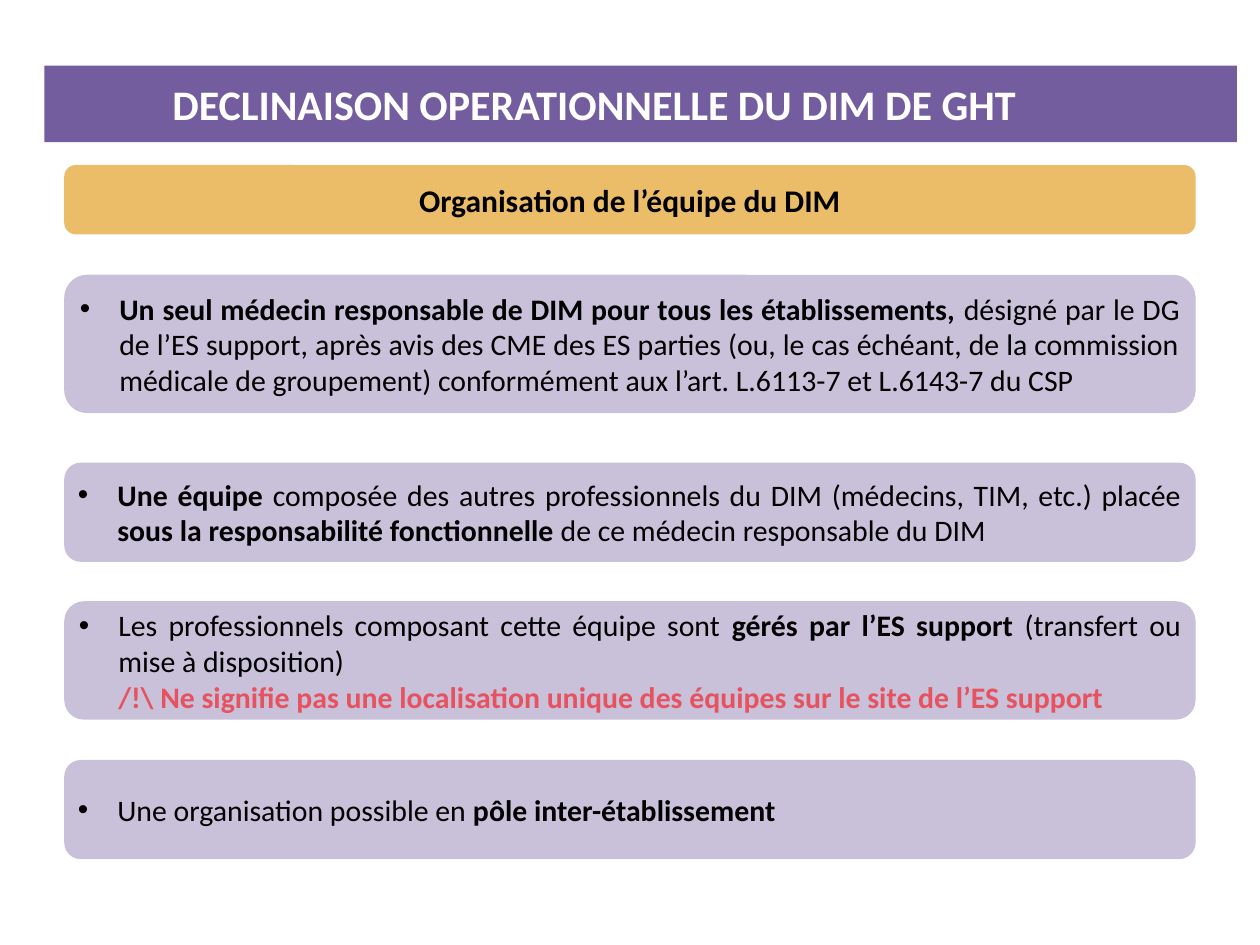
from lxml import etree
from pptx import Presentation
from pptx.dml.color import RGBColor
from pptx.enum import shapes, text
from pptx.oxml.ns import qn
from pptx.util import Pt

PURPLE = RGBColor(0x73, 0x5D, 0x9F)
GOLD = RGBColor(0xEC, 0xBD, 0x68)
LILAC = RGBColor(0xC9, 0xC0, 0xDA)
RED = RGBColor(0xE7, 0x52, 0x5F)
BLACK = RGBColor(0, 0, 0)
WHITE = RGBColor(255, 255, 255)

# Content: runs are (text, bold)
TITLE = "DECLINAISON OPERATIONNELLE DU DIM DE GHT"
HEAD = "Organisation de l’équipe du DIM"
WARN = "/!\\ Ne signifie pas une localisation unique des équipes sur le site de l’ES support"

# Cards: top, height, bullet runs, warning line
CARDS = [
    (157, 79, [
        ("Un seul médecin responsable de DIM pour tous les établissements, ", True),
        ("désigné par le DG de l’ES support, après avis des CME des ES parties "
         "(ou, le cas échéant, de la commission médicale de groupement) "
         "conformément aux l’art. L.6113-7 et L.6143-7 du CSP", False)], None),
    (264.4, 56.7, [
        ("Une équipe ", True),
        ("composée des autres professionnels du DIM (médecins, TIM, etc.) placée ", False),
        ("sous la responsabilité fonctionnelle", True),
        (" de ce médecin responsable du DIM", False)], None),
    (343.6, 67.7, [
        ("Les professionnels composant cette équipe sont ", False),
        ("gérés par l’ES support ", True),
        ("(transfert ou mise à disposition)", False)], WARN),
    (434.3, 56.7, [
        ("Une organisation possible en", False),
        (" pôle inter-établissement", True)], None),
]
LEFT, WIDTH, INDENT = 36.7, 646.5, 22.5

ALIGN = text.PP_ALIGN
SHAPE = shapes.MSO_SHAPE


def add_box(slide, kind, left, top, width, height, fill):
    box = slide.shapes.add_shape(kind, Pt(left), Pt(top), Pt(width), Pt(height))
    box.shadow.inherit = False
    box.fill.solid()
    box.fill.fore_color.rgb = fill
    box.line.fill.background()
    frame = box.text_frame
    frame.word_wrap = True
    frame.vertical_anchor = text.MSO_ANCHOR.MIDDLE
    frame.margin_left = frame.margin_right = Pt(5.1)
    frame.margin_top = frame.margin_bottom = Pt(2.8)
    return frame


def write(para, runs, size=17, color=BLACK, align=ALIGN.JUSTIFY,
          indent=0, bullet=False):
    para.alignment = align
    props = para._p.get_or_add_pPr()
    props.set("marL", str(Pt(indent)))
    props.set("indent", str(Pt(-indent) if bullet else 0))
    if bullet:
        font = etree.SubElement(props, qn("a:buFont"))
        font.set("typeface", "Arial")
        etree.SubElement(props, qn("a:buChar")).set("char", "•")
    for words, bold in runs:
        run = para.add_run()
        run.text = words
        run.font.name = "Calibri"
        run.font.size = Pt(size)
        run.font.bold = bold
        run.font.color.rgb = color


def main():
    deck = Presentation()
    deck.slide_width, deck.slide_height = Pt(720), Pt(540)
    slide = deck.slides.add_slide(deck.slide_layouts[6])

    # Title band
    frame = add_box(slide, SHAPE.RECTANGLE, 25.4, 37.6, 681.4, 43.7, PURPLE)
    write(frame.paragraphs[0], [(TITLE, True)], size=24, color=WHITE,
          align=ALIGN.LEFT, indent=68)

    # Heading
    frame = add_box(slide, SHAPE.ROUNDED_RECTANGLE, LEFT, 94.3, WIDTH, 39.6, GOLD)
    write(frame.paragraphs[0], [(HEAD, True)], size=18, align=ALIGN.CENTER)

    # Cards
    for top, height, runs, warn in CARDS:
        frame = add_box(slide, SHAPE.ROUNDED_RECTANGLE, LEFT, top, WIDTH, height, LILAC)
        write(frame.paragraphs[0], runs, indent=INDENT, bullet=True)
        if warn:
            write(frame.add_paragraph(), [(warn, True)], color=RED, indent=INDENT)

    deck.save("out.pptx")


if __name__ == "__main__":
    main()
